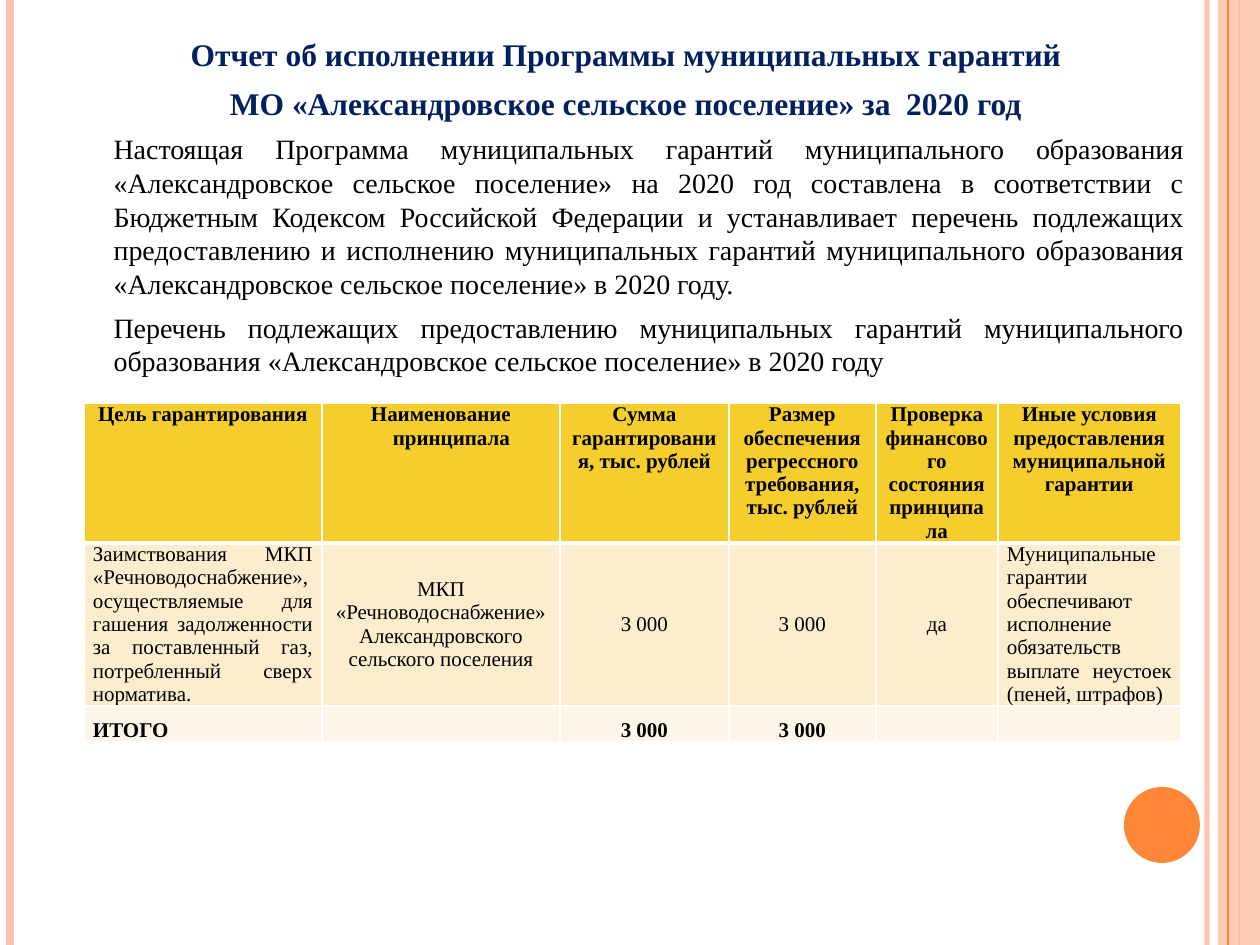
from dataclasses import dataclass

from lxml import etree
from pptx import Presentation
from pptx import util as u
from pptx.dml.color import RGBColor
from pptx.enum import shapes, text
from pptx.oxml.ns import qn

SLIDE_W, SLIDE_H = 1260, 945
PX_PER_INCH = 126
ALIGN = {"c": text.PP_ALIGN.CENTER, "j": text.PP_ALIGN.JUSTIFY}
ANCHOR = {
    "t": text.MSO_ANCHOR.TOP,
    "m": text.MSO_ANCHOR.MIDDLE,
    "b": text.MSO_ANCHOR.BOTTOM,
}


@dataclass(frozen=True)
class Theme:
    font: str = "Times New Roman"
    heading_size: int = 18
    body_size: int = 16
    table_size: int = 12
    heading: str = "002060"
    ink: str = "000000"
    accent: str = "FE8637"
    pale: str = "FEC3AE"
    rule: str = "FFFFFF"
    row_fills: tuple = ("F5CD2D", "FBEDCD", "FDF6E8")


THEME = Theme()

HEADING = [
    "Отчет об исполнении Программы муниципальных гарантий ",
    "МО «Александровское сельское поселение» за  2020 год ",
]
BODY = [
    "\tНастоящая Программа муниципальных гарантий муниципального образования "
    "«Александровское сельское поселение» на 2020 год составлена в соответствии "
    "с Бюджетным Кодексом Российской Федерации и устанавливает перечень "
    "подлежащих предоставлению и исполнению муниципальных гарантий "
    "муниципального образования «Александровское сельское поселение» в 2020 году.",
    "\tПеречень подлежащих предоставлению муниципальных гарантий муниципального "
    "образования «Александровское сельское поселение» в 2020 году",
]

COLUMNS = [238, 238, 169, 147, 122, 183]
ROWS = [139, 161, 36]
# Each cell: text, alignment, anchor
GUARANTEES = [
    [
        ("Цель гарантирования", "c", "t"),
        ("Наименование принципала", "c", "t"),
        ("Сумма гарантирования, тыс. рублей", "c", "t"),
        ("Размер обеспечения регрессного требования, тыс. рублей", "c", "t"),
        ("Проверка финансового состояния принципала", "c", "t"),
        ("Иные условия предоставления муниципальной гарантии", "c", "t"),
    ],
    [
        ("Заимствования МКП «Речноводоснабжение», осуществляемые для гашения "
         "задолженности за поставленный газ, потребленный сверх норматива.", "j", "t"),
        ("МКП «Речноводоснабжение» Александровского сельского поселения", "c", "m"),
        ("3 000", "c", "m"),
        ("3 000", "c", "m"),
        ("да", "c", "m"),
        ("Муниципальные гарантии обеспечивают исполнение обязательств выплате "
         "неустоек (пеней, штрафов)", "j", "t"),
    ],
    [
        ("ИТОГО", "j", "b"),
        ("", "c", "b"),
        ("3 000", "c", "b"),
        ("3 000", "c", "b"),
        ("", "c", "b"),
        ("", "c", "b"),
    ],
]


def px(length):
    return u.Emu(round(length * 914400 / PX_PER_INCH))


def rgb(color):
    return RGBColor.from_string(color)


def set_opacity(element, percent):
    for color in element.iter(qn("a:srgbClr")):
        etree.SubElement(color, qn("a:alpha"), val=str(percent * 1000))


def set_indent(paragraph, left):
    """Hang the first line back by the whole left margin."""
    properties = paragraph._p.get_or_add_pPr()
    properties.set("marL", str(px(left)))
    properties.set("indent", str(-px(left)))


def style_paragraph(paragraph, align, size, color, bold, before):
    paragraph.alignment = ALIGN[align]
    paragraph.space_before = u.Pt(before)
    for run in paragraph.runs:
        run.font.name = THEME.font
        run.font.size = u.Pt(size)
        run.font.bold = bold
        run.font.color.rgb = rgb(color)
    if not paragraph.runs:
        etree.SubElement(paragraph._p, qn("a:endParaRPr"), sz=str(size * 100))


def add_stripe(slide, x, color, width, opacity=100):
    stripe = slide.shapes.add_connector(
        shapes.MSO_CONNECTOR.STRAIGHT, px(x), 0, px(x), px(SLIDE_H))
    stripe.line.color.rgb = rgb(color)
    stripe.line.width = u.Pt(width)
    properties = stripe._element.spPr
    if opacity < 100:
        set_opacity(properties, opacity)
    etree.SubElement(properties, qn("a:effectLst"))


def add_plain_shape(slide, kind, box, color):
    shape = slide.shapes.add_shape(kind, *map(px, box))
    shape.shadow.inherit = False
    shape.fill.solid()
    shape.fill.fore_color.rgb = rgb(color)
    shape.line.fill.background()
    return shape


def add_frame(slide):
    """Stripes along both edges and the disc in the lower right corner."""
    add_stripe(slide, 1207, THEME.pale, 3, opacity=93)
    add_stripe(slide, 10, THEME.pale, 4.5)
    add_stripe(slide, 1239, THEME.accent, 1.5)
    band = add_plain_shape(slide, shapes.MSO_SHAPE.RECTANGLE,
                           (1218, 0, 42, SLIDE_H), THEME.pale)
    set_opacity(band._element.spPr, 87)
    add_stripe(slide, 1228, THEME.accent, 0.75)
    add_plain_shape(slide, shapes.MSO_SHAPE.OVAL, (1124, 787, 76, 76), THEME.accent)


def fill_report(slide, report, box):
    report.left, report.top, report.width, report.height = map(px, box)
    slide.shapes._spTree.append(report._element)
    frame = report.text_frame
    frame.word_wrap = True
    frame.auto_size = text.MSO_AUTO_SIZE.NONE
    frame.vertical_anchor = text.MSO_ANCHOR.TOP
    frame.text = "\n".join(HEADING + BODY)
    for index, paragraph in enumerate(frame.paragraphs):
        if index < len(HEADING):
            style_paragraph(paragraph, "c", THEME.heading_size, THEME.heading, True, 6)
        else:
            style_paragraph(paragraph, "j", THEME.body_size, THEME.ink, False, 6)
        set_indent(paragraph, 38)
        etree.SubElement(paragraph._p.get_or_add_pPr(), qn("a:buNone"))


def set_borders(cell, **widths):
    properties = cell._tc.get_or_add_tcPr()
    for side in "LRTB":
        line = etree.SubElement(properties, qn(f"a:ln{side}"),
                                w=str(u.Pt(widths.get(side, 1))))
        fill = etree.SubElement(line, qn("a:solidFill"))
        etree.SubElement(fill, qn("a:srgbClr"), val=THEME.rule)


def add_guarantees(slide, left, top):
    table = slide.shapes.add_table(
        len(ROWS), len(COLUMNS), px(left), px(top),
        px(sum(COLUMNS)), px(sum(ROWS))).table
    for column, width in zip(table.columns, COLUMNS):
        column.width = px(width)
    for r, (height, entries) in enumerate(zip(ROWS, GUARANTEES)):
        table.rows[r].height = px(height)
        for c, (wording, align, anchor) in enumerate(entries):
            cell = table.cell(r, c)
            set_borders(cell, T=3 if r == 1 else 1, B=3 if r == 0 else 1)
            cell.fill.solid()
            cell.fill.fore_color.rgb = rgb(THEME.row_fills[r])
            cell.margin_left = cell.margin_right = px(9)
            cell.margin_top = cell.margin_bottom = 0
            cell.vertical_anchor = ANCHOR[anchor]
            cell.text = wording
            style_paragraph(cell.text_frame.paragraphs[0], align,
                            THEME.table_size, THEME.ink, r != 1, 5)
    set_indent(table.cell(0, 1).text_frame.paragraphs[0], 21)


def main():
    deck = Presentation()
    deck.slide_width, deck.slide_height = px(SLIDE_W), px(SLIDE_H)
    slide = deck.slides.add_slide(deck.slide_layouts[1])
    title, report = slide.placeholders
    slide.shapes._spTree.remove(title._element)
    add_frame(slide)
    fill_report(slide, report, (63, 29, 1134, 815))
    add_guarantees(slide, 84, 403)
    deck.save("out.pptx")


if __name__ == "__main__":
    main()
